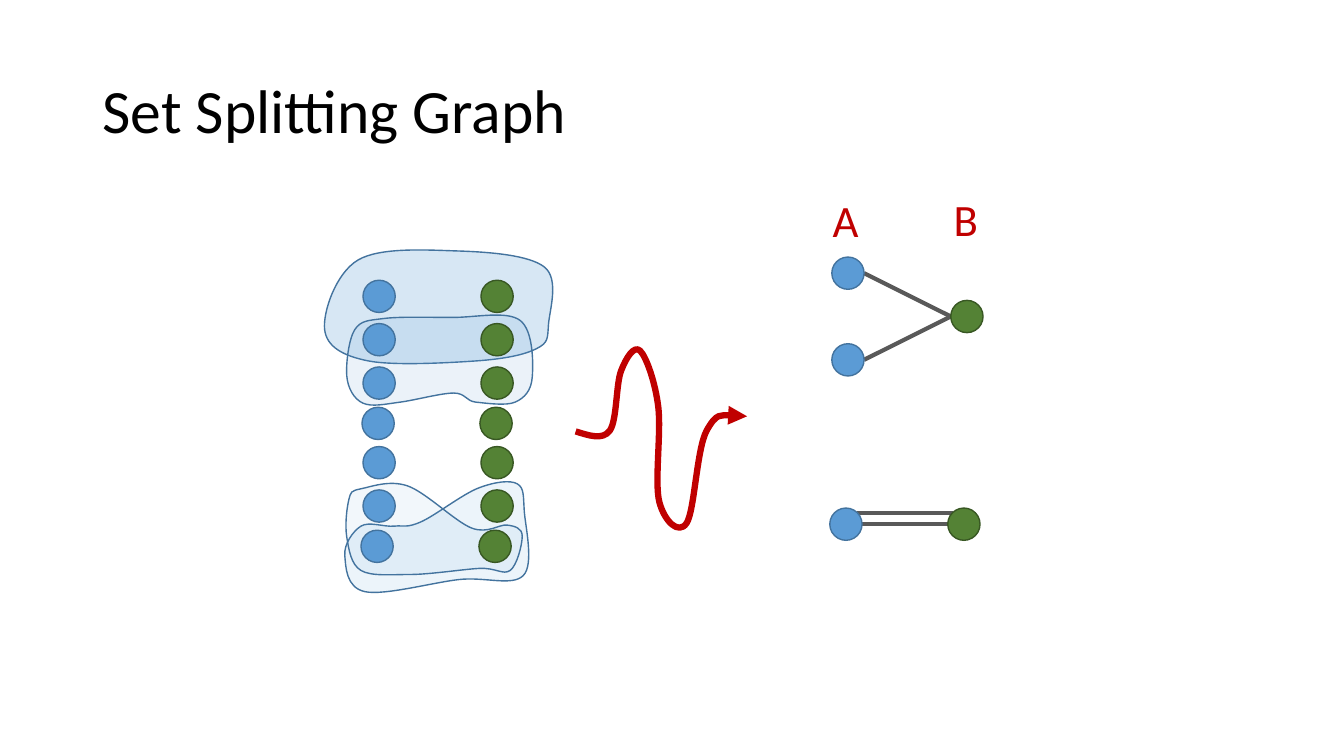
from itertools import pairwise

from lxml.etree import SubElement
from pptx import Presentation
from pptx.dml.color import RGBColor
from pptx.enum.shapes import MSO_CONNECTOR, MSO_SHAPE
from pptx.enum.text import MSO_ANCHOR, MSO_AUTO_SIZE
from pptx.oxml.ns import qn
from pptx.util import Pt

PX = 9144
BLUE, BLUE_EDGE = "5B9BD5", "43739E"
GREEN, GREEN_EDGE = "548235", "385723"
RED, GRAY, BLACK = "C00000", "595959", "000000"
RADIUS = 16
DIAMETER = 2 * RADIUS
COLUMN_GAP = 117

presentation = Presentation()
presentation.slide_width = 1333 * PX
presentation.slide_height = 750 * PX
slide = presentation.slides.add_slide(presentation.slide_layouts[6])
shapes = slide.shapes


def color(value):
    return RGBColor.from_string(value)


def add_text(text, left, top, width, height, size, fill, wrap=True, spacing=1.0,
             anchor=MSO_ANCHOR.TOP, auto_size=MSO_AUTO_SIZE.NONE):
    box = shapes.add_textbox(left * PX, top * PX, width * PX, height * PX)
    frame = box.text_frame
    frame.word_wrap = wrap
    frame.auto_size = auto_size
    frame.vertical_anchor = anchor
    paragraph = frame.paragraphs[0]
    paragraph.line_spacing = spacing
    run = paragraph.add_run()
    run.text = text
    run.font.name = "Calibri"
    run.font.size = Pt(size)
    run.font.color.rgb = color(fill)


element_pairs = [(360, 278), (360, 321), (360, 364), (359, 404),
                 (360, 443), (360, 486), (358, 526)]
upper_a, middle_a, lower_a = (825, 255), (825, 341), (823, 504)
upper_b, lower_b = (943, 298), (940, 504)

parallel_overlap, parallel_rise = 5, 11
graph_edges = [
    (upper_a, upper_b, 0, 0),
    (middle_a, upper_b, 0, 0),
    (lower_a, lower_b, 0, 0),
    (lower_a, lower_b, parallel_overlap, parallel_rise),
]
for (a_left, a_top), (b_left, b_top), overlap, rise in graph_edges:
    edge = shapes.add_connector(
        MSO_CONNECTOR.STRAIGHT,
        (a_left + DIAMETER - overlap) * PX, (a_top + RADIUS - rise) * PX,
        (b_left + overlap) * PX, (b_top + RADIUS - rise) * PX)
    edge.line.color.rgb = color(GRAY)
    edge.line.width = Pt(3)
    SubElement(edge._element.spPr, qn("a:effectLst"))

lower_set = [(417, 518), (391, 522), (358, 522), (342, 551), (362, 587),
             (455, 575), (519, 571), (520, 507), (513, 480), (475, 484)]
crossing_set = [(358, 485), (346, 496), (344, 533), (358, 566), (407, 570), (475, 564),
                (506, 566), (518, 532), (503, 521), (468, 524), (404, 482)]
top_set = [(532, 346), (544, 322), (540, 265), (454, 249),
           (355, 258), (322, 327), (365, 358), (473, 358)]
second_set = [(397, 399), (360, 400), (344, 373), (352, 327), (381, 316), (449, 315),
              (516, 318), (528, 374), (511, 399), (472, 399), (450, 390)]
wavy_arrow = [(571, 428), (605, 427), (616, 368), (635, 348), (653, 404),
              (654, 498), (681, 519), (701, 427), (741, 413)]

smooth_curves = [
    (lower_set, 11),
    (crossing_set, 8),
    (top_set, 24),
    (second_set, 12),
    (wavy_arrow, None),
]
for anchors, opacity in smooth_curves:
    closed = opacity is not None
    knots = [complex(x, y) for x, y in anchors]
    previous_knots = knots[-1:] + knots[:-1]
    next_knots = knots[1:] + knots[:1]
    handles = [(after - before) / 6 for before, after in zip(previous_knots, next_knots)]
    if closed:
        knots.append(knots[0])
        handles.append(handles[0])
    else:
        handles[0] = (knots[1] - handles[1] - knots[0]) / 2
        handles[-1] = (knots[-1] - knots[-2] - handles[-2]) / 2

    curve_points = []
    for (start, start_handle), (end, end_handle) in pairwise(zip(knots, handles)):
        curve_points += [start + start_handle, end - end_handle, end]
    builder = shapes.build_freeform(*anchors[0], scale=float(PX))
    builder.add_line_segments(
        [(round(point.real), round(point.imag)) for point in curve_points], close=closed)
    curve = builder.convert_to_shape()
    curve.shadow.inherit = False

    segments = list(curve._element.iter(qn("a:lnTo")))
    for first, second, third in zip(segments[::3], segments[1::3], segments[2::3]):
        first.tag = qn("a:cubicBezTo")
        for segment in (second, third):
            first.append(segment[0])
            segment.getparent().remove(segment)

    if closed:
        curve.fill.solid()
        curve.fill.fore_color.rgb = color(BLUE)
        fill_color = next(curve._element.spPr.iter(qn("a:srgbClr")))
        SubElement(fill_color, qn("a:alpha"), val=str(opacity * 1000))
        curve.line.color.rgb = color(BLUE_EDGE)
        curve.line.width = Pt(1)
    else:
        curve.fill.background()
        curve.line.color.rgb = color(RED)
        curve.line.width = Pt(4.5)
        SubElement(curve.line._get_or_add_ln(), qn("a:tailEnd"), type="triangle")

add_text("Set Splitting Graph", 92, 40, 1150, 145, size=44, fill=BLACK,
         spacing=0.9, anchor=MSO_ANCHOR.MIDDLE)

blue_circles = element_pairs + [upper_a, middle_a, lower_a]
green_circles = [(left + COLUMN_GAP, top) for left, top in element_pairs]
green_circles += [upper_b, lower_b]
for circles, fill, outline in [(blue_circles, BLUE, BLUE_EDGE),
                               (green_circles, GREEN, GREEN_EDGE)]:
    for left, top in circles:
        circle = shapes.add_shape(
            MSO_SHAPE.OVAL, left * PX, top * PX, DIAMETER * PX, DIAMETER * PX)
        circle.shadow.inherit = False
        circle.fill.solid()
        circle.fill.fore_color.rgb = color(fill)
        circle.line.color.rgb = color(outline)
        circle.line.width = Pt(1)

for label, left, top in [("A", 816, 186), ("B", 936, 185)]:
    add_text(label, left, top, 46, 64, size=32, fill=RED, wrap=False,
             auto_size=MSO_AUTO_SIZE.SHAPE_TO_FIT_TEXT)

presentation.save("out.pptx")
